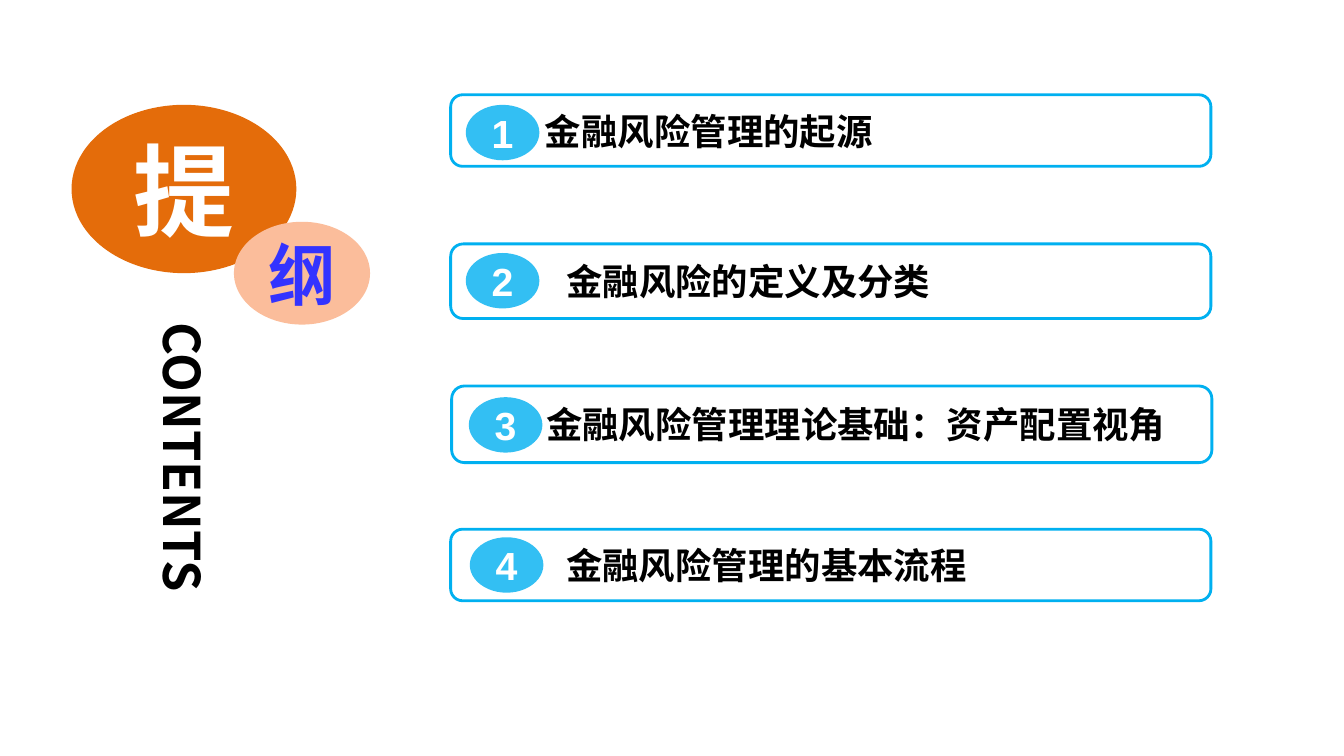
from dataclasses import dataclass

from lxml.etree import SubElement
from pptx import Presentation
from pptx.dml.color import RGBColor
from pptx.enum.shapes import MSO_SHAPE
from pptx.enum.text import MSO_ANCHOR, MSO_AUTO_SIZE, PP_ALIGN
from pptx.oxml.ns import qn
from pptx.util import Inches, Pt


@dataclass(frozen=True)
class Theme:
    white: str = "FFFFFF"
    black: str = "000000"
    sky: str = "00B0F0"
    orange: str = "E46C0A"
    peach: str = "FBBD9B"
    blue: str = "3333FF"
    hans: str = "Noto Sans CJK SC"
    latin: str = "Arial"
    huge: int = 72
    large: int = 48
    title: int = 36
    number: int = 28
    item: int = 26


class Outline:
    """Draw the parts of a contents slide in one theme."""

    def __init__(self, slide, theme):
        self.slide = slide
        self.theme = theme

    def label(self, shape, text, size, color, face, align, inset=0):
        frame = shape.text_frame
        frame.auto_size = MSO_AUTO_SIZE.NONE
        frame.vertical_anchor = MSO_ANCHOR.MIDDLE
        frame.margin_left = Inches(inset)
        frame.margin_right = frame.margin_top = frame.margin_bottom = 0
        para = frame.paragraphs[0]
        para.alignment = align
        run = para.add_run()
        run.text = text
        font = run.font
        font.name, font.size, font.bold = face, Pt(size), True
        font.color.rgb = RGBColor.from_string(color)
        SubElement(font._element, qn("a:ea")).set("typeface", face)
        return frame

    def shape(self, kind, box, fill):
        shape = self.slide.shapes.add_shape(kind, *map(Inches, box))
        shape.shadow.inherit = False
        shape.fill.solid()
        shape.fill.fore_color.rgb = RGBColor.from_string(fill)
        shape.line.fill.background()
        return shape

    def title(self, text, box):
        shape = self.slide.shapes.title
        shape.left, shape.top, shape.width, shape.height = map(Inches, box)
        look = self.theme
        frame = self.label(shape, text, look.title, look.black, look.hans, PP_ALIGN.LEFT)
        frame._txBody.bodyPr.set("vert", "eaVert")

    def oval(self, text, box, fill, color, size):
        shape = self.shape(MSO_SHAPE.OVAL, box, fill)
        self.label(shape, text, size, color, self.theme.hans, PP_ALIGN.CENTER)

    def item(self, text, box, inset):
        look = self.theme
        shape = self.shape(MSO_SHAPE.ROUNDED_RECTANGLE, box, look.white)
        shape.line.color.rgb = RGBColor.from_string(look.sky)
        shape.line.width = Pt(2)
        self.label(shape, text, look.item, look.black, look.hans, PP_ALIGN.LEFT, inset)

    def badge(self, number, left, top):
        look = self.theme
        shape = self.shape(MSO_SHAPE.OVAL, (left, top, 0.73, 0.55), look.sky)
        tint = shape.fill._xPr.find(qn("a:solidFill"))[0]
        SubElement(tint, qn("a:alpha")).set("val", "80000")
        frame = self.label(shape, str(number), look.number, look.white, look.latin, PP_ALIGN.CENTER)
        frame.word_wrap = False


def main():
    deck = Presentation()
    deck.slide_width, deck.slide_height = Inches(13.33), Inches(7.5)
    theme = Theme()
    page = Outline(deck.slides.add_slide(deck.slide_layouts[5]), theme)
    items = [
        ("金融风险管理的起源", 4.47, 0.94, 0.71, 0.9, 4.62, 1.04),
        ("金融风险的定义及分类", 4.47, 2.42, 0.74, 1.11, 4.62, 2.51),
        ("金融风险管理理论基础：资产配置视角", 4.48, 3.83, 0.76, 0.9, 4.65, 3.94),
        ("金融风险管理的基本流程", 4.47, 5.25, 0.71, 1.11, 4.66, 5.33),
    ]
    for number, (text, left, top, height, inset, *spot) in enumerate(items, 1):
        page.item(text, (left, top, 7.54, height), inset)
        page.badge(number, *spot)
    page.oval("提", (0.71, 1.04, 2.23, 1.67), theme.orange, theme.white, theme.huge)
    page.oval("纲", (2.32, 2.2, 1.35, 1.02), theme.peach, theme.blue, theme.large)
    page.title("CONTENTS", (1.38, 3.2, 0.89, 3))
    deck.save("out.pptx")


if __name__ == "__main__":
    main()
